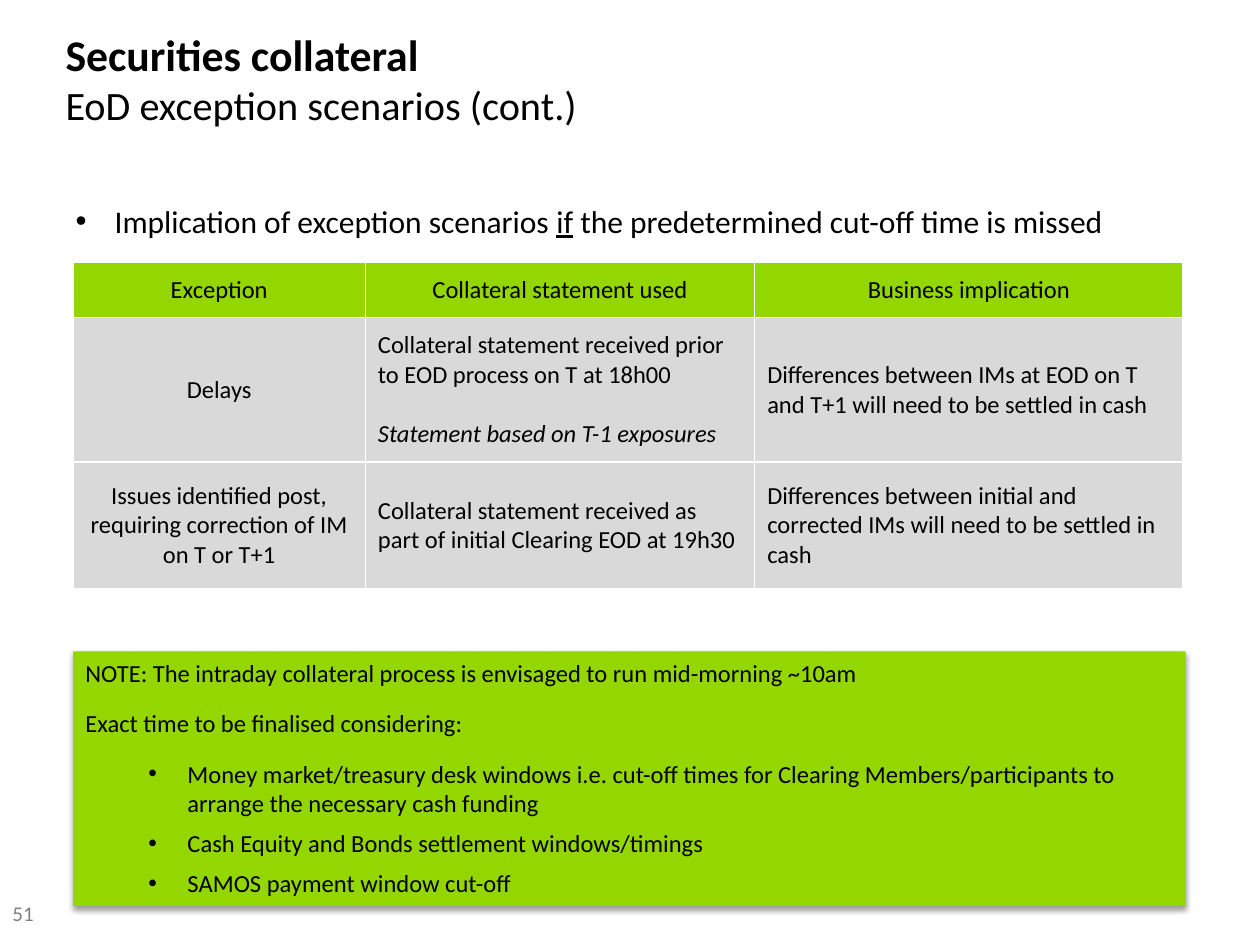
from dataclasses import dataclass

from pptx import Presentation
from pptx.dml.color import RGBColor
from pptx.enum.shapes import MSO_SHAPE
from pptx.enum.text import MSO_ANCHOR, PP_ALIGN
from pptx.oxml import parse_xml
from pptx.oxml.ns import nsdecls
from pptx.util import Inches, Pt


@dataclass(frozen=True)
class Theme:
    font: str = "Calibri"
    text: str = "000000"
    muted: str = "808080"
    green: str = "94D600"
    grey: str = "D9D9D9"
    border: str = "FFFFFF"
    title: int = 25
    subtitle: int = 23
    lead: int = 18
    body: int = 14
    number: int = 12


@dataclass(frozen=True)
class Span:
    text: str
    size: int = 14
    bold: bool = False
    italic: bool = False
    underline: bool = False
    color: str = "000000"


@dataclass(frozen=True)
class Para:
    spans: tuple[Span, ...]
    align: PP_ALIGN = PP_ALIGN.LEFT
    before: float = 0
    after: float = 0
    bullet_at: float | None = None  # left edge of bulleted text, in inches
    level: int = 0


THEME = Theme()
HANGING = 0.31


def para(text: str, align: PP_ALIGN = PP_ALIGN.LEFT, before: float = 0, after: float = 0,
         bullet_at: float | None = None, level: int = 0, **style) -> Para:
    """Make a paragraph of a single span."""
    return Para((Span(text, **style),), align, before, after, bullet_at, level)


def set_bullet(p, left: float) -> None:
    pPr = p._p.get_or_add_pPr()
    pPr.set("marL", str(Inches(left)))
    pPr.set("indent", str(Inches(-HANGING)))
    pPr.append(parse_xml(f'<a:buFont {nsdecls("a")} typeface="Arial"/>'))
    pPr.append(parse_xml(f'<a:buChar {nsdecls("a")} char="•"/>'))


def write(tf, paras: list[Para], anchor: MSO_ANCHOR = MSO_ANCHOR.TOP) -> None:
    tf.word_wrap = True
    tf.vertical_anchor = anchor
    for i, item in enumerate(paras):
        p = tf.add_paragraph() if i else tf.paragraphs[0]
        p.level = item.level
        if item.bullet_at is not None:
            set_bullet(p, item.bullet_at)
        p.alignment = item.align
        p.space_before, p.space_after = Pt(item.before), Pt(item.after)
        for j, span in enumerate(item.spans):
            if j and item.spans[j - 1].text.endswith("\n"):
                p.add_line_break()
            r = p.add_run()
            r.text = span.text.rstrip("\n")
            font = r.font
            font.name, font.size = THEME.font, Pt(span.size)
            font.bold, font.italic, font.underline = span.bold, span.italic, span.underline
            font.color.rgb = RGBColor.from_string(span.color)


def place(sp, left: float, top: float, width: float, height: float) -> None:
    sp.left, sp.top, sp.width, sp.height = map(Inches, (left, top, width, height))


def set_borders(cell) -> None:
    tcPr = cell._tc.get_or_add_tcPr()
    for side in ("lnL", "lnR", "lnT", "lnB"):
        tcPr.append(parse_xml(
            f'<a:{side} {nsdecls("a")} w="{Pt(1)}"><a:solidFill>'
            f'<a:srgbClr val="{THEME.border}"/></a:solidFill></a:{side}>'))


def add_exceptions_table(slide, rows: list[list[list[Para]]]) -> None:
    widths, heights = (2.32, 3.09, 3.4), (0.44, 1.14, 1.01)
    frame = slide.shapes.add_table(len(heights), len(widths), Inches(0.58), Inches(2.08),
                                   Inches(sum(widths)), Inches(sum(heights)))
    table = frame.table
    table.first_row = table.horz_banding = False
    for column, width in zip(table.columns, widths):
        column.width = Inches(width)
    for i, (row, height) in enumerate(zip(table.rows, heights)):
        row.height = Inches(height)
        for cell, paras in zip(row.cells, rows[i]):
            set_borders(cell)
            cell.fill.solid()
            cell.fill.fore_color.rgb = RGBColor.from_string(THEME.grey if i else THEME.green)
            cell.margin_left = cell.margin_right = Inches(0.1)
            cell.margin_top = cell.margin_bottom = Inches(0.1)
            write(cell.text_frame, paras)
            cell.vertical_anchor = MSO_ANCHOR.MIDDLE


def add_note(slide, paras: list[Para]) -> None:
    sp = slide.shapes.add_shape(MSO_SHAPE.RECTANGLE, Inches(0.58), Inches(5.17),
                                Inches(8.83), Inches(2.02))
    sp.fill.solid()
    sp.fill.fore_color.rgb = RGBColor.from_string(THEME.green)
    sp.line.fill.background()
    sp.shadow.inherit = False
    sp._element.spPr.find("{*}effectLst").append(parse_xml(
        f'<a:outerShdw {nsdecls("a")} blurRad="{Pt(3.1)}" dist="{Pt(1.6)}" dir="5400000" '
        'rotWithShape="0"><a:srgbClr val="000000"><a:alpha val="38000"/></a:srgbClr>'
        '</a:outerShdw>'))
    write(sp.text_frame, paras)


def main() -> None:
    prs = Presentation()
    prs.slide_width, prs.slide_height = Inches(10), Inches(7.5)
    slide = prs.slides.add_slide(prs.slide_layouts[1])
    title, body = slide.placeholders

    place(title, 0.42, 0.17, 6.58, 0.87)
    write(title.text_frame, [Para((
        Span("Securities collateral\n", THEME.title, bold=True),
        Span("EoD exception scenarios (cont.)", THEME.subtitle)))])

    place(body, 0.5, 1.55, 9.33, 0.4)
    write(body.text_frame, [Para((
        Span("Implication of exception scenarios ", THEME.lead),
        Span("if", THEME.lead, underline=True),
        Span(" the predetermined cut-off time is missed", THEME.lead)), bullet_at=HANGING)])

    center = PP_ALIGN.CENTER
    headings = ("Exception", "Collateral statement used", "Business implication")
    add_exceptions_table(slide, [
        [[para(heading, center)] for heading in headings],
        [[para("Delays", center)],
         [para("Collateral statement received prior to EOD process on T at 18h00"),
          para("Statement based on T-1 exposures", before=17, italic=True)],
         [para("Differences between IMs at EOD on T and T+1 will need to be settled in cash")]],
        [[para("Issues identified post, requiring correction of IM on T or T+1", center)],
         [para("Collateral statement received as part of initial Clearing EOD at 19h30")],
         [para("Differences between initial and corrected IMs will need to be settled in cash")]],
    ])

    considerations = (
        "Money market/treasury desk windows i.e. cut-off times for Clearing "
        "Members/participants to arrange the necessary cash funding",
        "Cash Equity and Bonds settlement windows/timings",
        "SAMOS payment window cut-off",
    )
    add_note(slide, [
        para("NOTE: The intraday collateral process is envisaged to run mid-morning ~10am",
             after=6),
        para("Exact time to be finalised considering:", before=6, after=6),
        *(para(text, before=6, bullet_at=0.81, level=1) for text in considerations),
    ])

    number = slide.shapes.add_textbox(Inches(0), Inches(7.1), Inches(0.59), Inches(0.4))
    write(number.text_frame, [para("51", size=THEME.number, color=THEME.muted)])
    prs.save("out.pptx")


if __name__ == "__main__":
    main()
